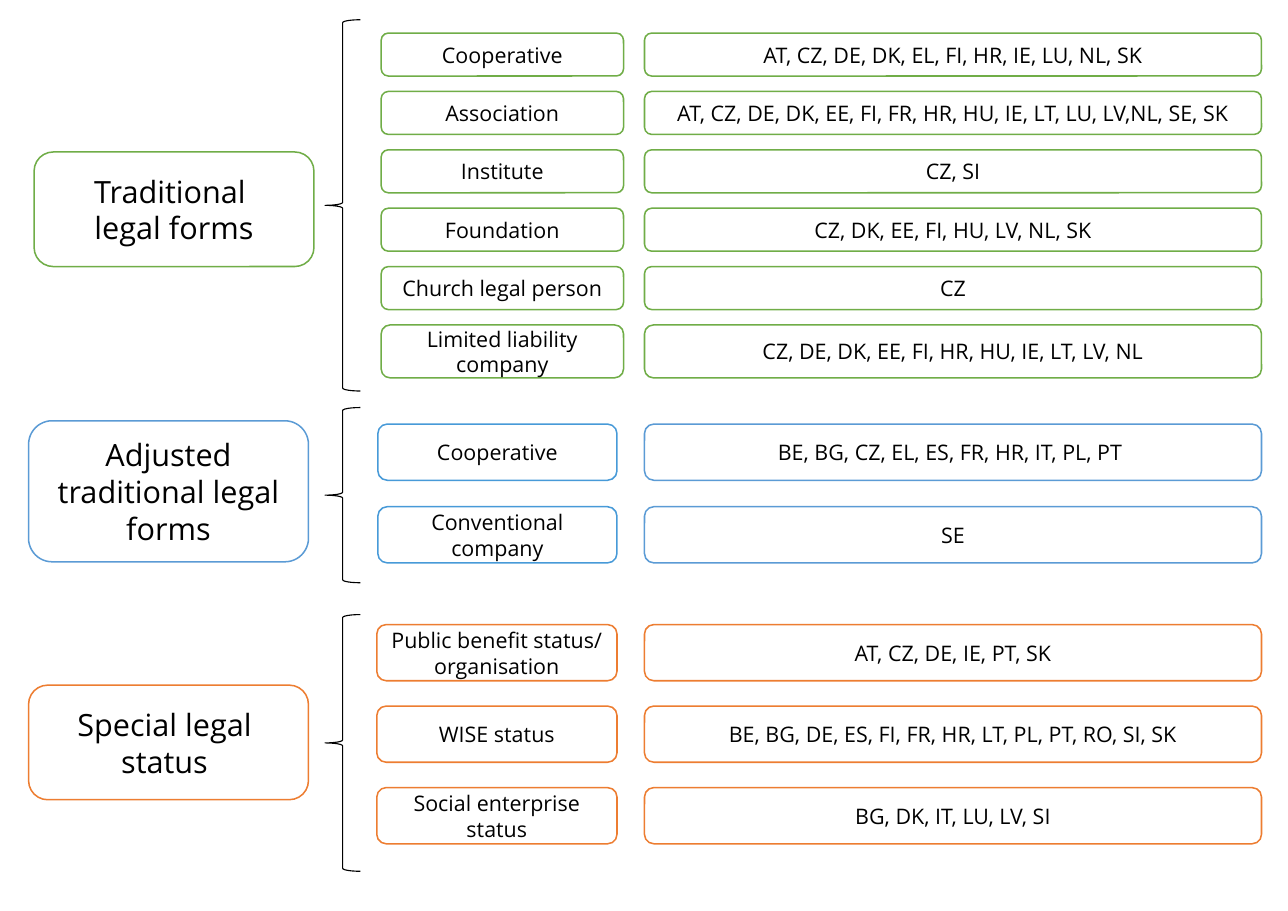
from dataclasses import dataclass

from pptx import Presentation
from pptx import util as u
from pptx.dml.color import RGBColor
from pptx.enum import shapes, text

SLIDE_W, SLIDE_H = 11.69, 8.27
BRACE_X, BRACE_W = 2.95, 0.32
HEADING_W = 2.54
COUNTRIES_X, COUNTRIES_W = 5.85, 5.6

COLOURS = {
    "green": "70AD47",
    "blue": "5B9BD5",
    "bright blue": "479AD8",
    "orange": "ED7D31",
    "white": "FFFFFF",
    "black": "000000",
}


@dataclass
class Group:
    """Tops are measured from the top of the group, which its brace spans."""
    heading: str
    colour: str
    label_colour: str
    top: float
    height: float
    heading_box: tuple  # left, top, height
    label_box: tuple  # left, width
    first_row: float
    pitch: float
    row_heights: list
    rows: list


GROUPS = [
    Group("Traditional \nlegal forms", "green", "green", 0.18, 3.37,
          (0.31, 1.2, 1.04), (3.46, 2.2), 0.12, 0.53, [0.39] * 5 + [0.48], [
              ("Cooperative", "AT, CZ, DE, DK, EL, FI, HR, IE, LU, NL, SK"),
              ("Association", "AT, CZ, DE, DK, EE, FI, FR, HR, HU, IE, LT, LU, LV,NL, SE, SK"),
              ("Institute", "CZ, SI"),
              ("Foundation", "CZ, DK, EE, FI, HU, LV, NL, SK"),
              ("Church legal person", "CZ"),
              ("Limited liability company", "CZ, DE, DK, EE, FI, HR, HU, IE, LT, LV, NL"),
          ]),
    Group("Adjusted traditional legal forms", "blue", "bright blue", 3.7, 1.59,
          (0.26, 0.12, 1.28), (3.43, 2.17), 0.15, 0.75, [0.51] * 2, [
              ("Cooperative", "BE, BG, CZ, EL, ES, FR, HR, IT, PL, PT "),
              ("Conventional company", "SE"),
          ]),
    Group("Special legal \nstatus ", "orange", "orange", 5.58, 2.33,
          (0.26, 0.64, 1.04), (3.42, 2.18), 0.09, 0.74, [0.51] * 3, [
              ("Public benefit status/ organisation", "AT, CZ, DE, IE, PT, SK"),
              ("WISE status", "BE, BG, DE, ES, FI, FR, HR, LT, PL, PT, RO, SI, SK"),
              ("Social enterprise status", "BG, DK, IT, LU, LV, SI"),
          ]),
]


def rgb(name):
    return RGBColor.from_string(COLOURS[name])


def add_outline(page, preset, box, colour, width):
    shape = page.shapes.add_shape(preset, *map(u.Inches, box))
    shape.shadow.inherit = False
    shape.line.color.rgb = rgb(colour)
    shape.line.width = u.Pt(width)
    return shape


def add_card(page, box, wording, colour, size):
    card = add_outline(page, shapes.MSO_SHAPE.ROUNDED_RECTANGLE, box, colour, 1)
    card.fill.solid()
    card.fill.fore_color.rgb = rgb("white")
    frame = card.text_frame
    frame.text = wording
    frame.word_wrap = True
    frame.vertical_anchor = text.MSO_ANCHOR.MIDDLE
    for para in frame.paragraphs:
        para.alignment = text.PP_ALIGN.CENTER
        for span in para.runs:
            for key, value in {"name": "Open Sans", "size": u.Pt(size)}.items():
                setattr(span.font, key, value)
            span.font.color.rgb = rgb("black")


def add_brace(page, box):
    brace = add_outline(page, shapes.MSO_SHAPE.LEFT_BRACE, box, "black", 0.75)
    brace.fill.background()


def add_group(page, group):
    """Place a heading, its brace, and one label and country list per row."""
    left, offset, height = group.heading_box
    add_card(page, (left, group.top + offset, HEADING_W, height),
             group.heading, group.colour, 20)
    add_brace(page, (BRACE_X, group.top, BRACE_W, group.height))

    label_x, label_w = group.label_box
    for index, ((label, countries), height) in enumerate(zip(group.rows, group.row_heights)):
        top = group.top + group.first_row + index * group.pitch
        add_card(page, (label_x, top, label_w, height), label, group.label_colour, 14)
        add_card(page, (COUNTRIES_X, top, COUNTRIES_W, height), countries, group.colour, 14)


def main():
    deck = Presentation()
    deck.slide_width, deck.slide_height = u.Inches(SLIDE_W), u.Inches(SLIDE_H)
    page = deck.slides.add_slide(deck.slide_layouts[6])
    for group in GROUPS:
        add_group(page, group)
    deck.save("out.pptx")


if __name__ == "__main__":
    main()
